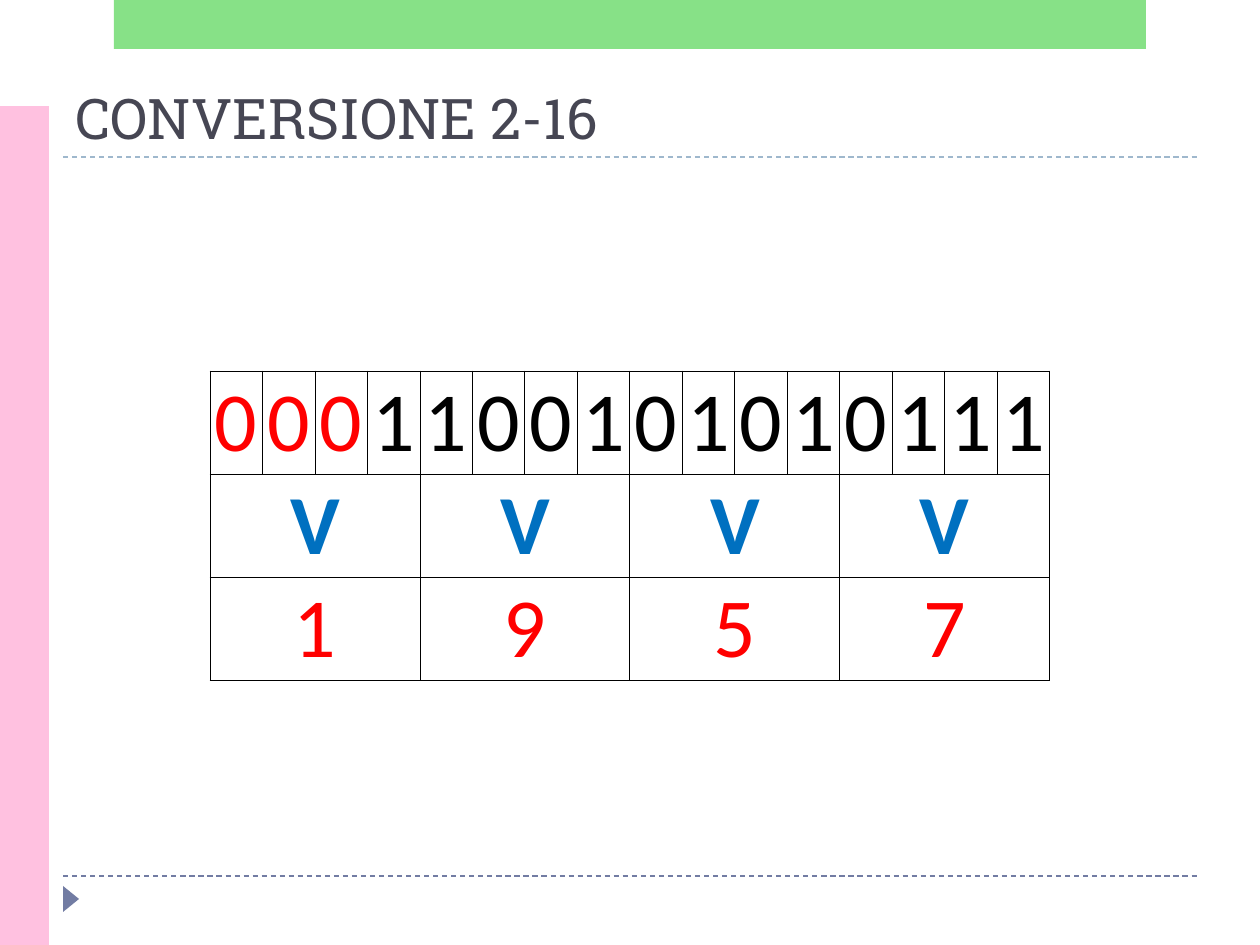
from dataclasses import dataclass

from lxml import etree
from pptx import Presentation
from pptx.dml.color import RGBColor
from pptx.enum.dml import MSO_LINE
from pptx.enum.shapes import MSO_CONNECTOR, MSO_SHAPE
from pptx.enum.text import MSO_ANCHOR, MSO_AUTO_SIZE, PP_ALIGN
from pptx.oxml.ns import qn
from pptx.util import Emu, Pt


@dataclass(frozen=True)
class Theme:
    title_font: str = "Roboto Slab"
    digit_font: str = "Calibri"
    title_size: int = 32
    digit_size: int = 48
    rule_width: float = 0.75
    grid_width: float = 0.5
    title: str = "464653"
    upper_rule: str = "9FB8CD"
    accent: str = "727CA3"
    pink: str = "FFC1E0"
    green: str = "62D862"
    green_opacity: int = 76
    white: str = "FFFFFF"
    black: str = "000000"
    red: str = "FF0000"
    blue: str = "0070C0"


THEME = Theme()
BITS = "0001100101010111"
PADDING_BITS = 3
GROUP = 4


def px(length):
    return Emu(round(length * 914400 / 126))


def rgb(colour):
    return RGBColor.from_string(colour)


def add_block(slide, preset, box, colour):
    block = slide.shapes.add_shape(preset, *map(px, box))
    block.shadow.inherit = False
    block.fill.solid()
    block.fill.fore_color.rgb = rgb(colour)
    block.line.fill.background()
    return block


def add_rule(slide, left, y, width, colour):
    rule = slide.shapes.add_connector(
        MSO_CONNECTOR.STRAIGHT, px(left), px(y), px(left + width), px(y))
    rule.line.color.rgb = rgb(colour)
    rule.line.width = Pt(THEME.rule_width)
    rule.line.dash_style = MSO_LINE.DASH
    etree.SubElement(rule._element.spPr, qn("a:effectLst"))


def add_frame(slide, box):
    """Rules, marker and coloured bands around the slide."""
    left, top, width, height = box
    bottom = top + height
    add_rule(slide, left + 63, bottom - 69, width - 126, THEME.accent)
    add_rule(slide, left + 63, top + 157, width - 126, THEME.upper_rule)
    marker = add_block(slide, MSO_SHAPE.ISOSCELES_TRIANGLE,
                       (left + 58, bottom - 54, 26, 16), THEME.accent)
    marker.rotation = 90
    add_block(slide, MSO_SHAPE.RECTANGLE,
              (left, top + 106, 49, height - 106), THEME.pink)
    band = add_block(slide, MSO_SHAPE.RECTANGLE,
                     (left + 114, top, 1032, 49), THEME.green)
    colour = band._element.spPr.find(qn("a:solidFill"))[0]
    etree.SubElement(colour, qn("a:alpha"),
                     val=str(THEME.green_opacity * 1000))


def add_title(slide, box, text):
    title = slide.shapes.title
    title.left, title.top, title.width, title.height = map(px, box)
    frame = title.text_frame
    frame.text = text
    frame.auto_size = MSO_AUTO_SIZE.NONE
    frame.vertical_anchor = MSO_ANCHOR.BOTTOM
    heading = frame.paragraphs[0]
    heading.alignment = PP_ALIGN.LEFT
    heading.font.name = THEME.title_font
    heading.font.size = Pt(THEME.title_size)
    heading.font.color.rgb = rgb(THEME.title)


def add_borders(cell):
    properties = cell._tc.get_or_add_tcPr()
    for position, side in enumerate(("lnL", "lnR", "lnT", "lnB")):
        border = etree.Element(qn(f"a:{side}"),
                               w=str(Pt(THEME.grid_width)))
        fill = etree.SubElement(border, qn("a:solidFill"))
        etree.SubElement(fill, qn("a:srgbClr"), val=THEME.black)
        properties.insert(position, border)


def write_cell(cell, text, colour, bold=False):
    cell.vertical_anchor = MSO_ANCHOR.BOTTOM
    cell.text = text
    digit = cell.text_frame.paragraphs[0]
    digit.alignment = PP_ALIGN.CENTER
    digit.font.name = THEME.digit_font
    digit.font.size = Pt(THEME.digit_size)
    digit.font.bold = bold
    digit.font.color.rgb = rgb(colour)


def add_conversion(slide, box):
    """Bits on top, one arrow and one hexadecimal digit per group of four."""
    frame = slide.shapes.add_table(3, len(BITS), *map(px, box))
    table = frame.table
    table.first_row = table.horz_banding = False
    for column in table.columns:
        column.width = px(box[2] / len(BITS))
    for row in table.rows:
        row.height = px(box[3] / 3)
    for cell in table.iter_cells():
        cell.margin_left = cell.margin_right = 0
        cell.margin_top = cell.margin_bottom = 0
        cell.fill.background()
        add_borders(cell)

    for index, bit in enumerate(BITS):
        colour = THEME.red if index < PADDING_BITS else THEME.black
        write_cell(table.cell(0, index), bit, colour)
    for start in range(0, len(BITS), GROUP):
        hex_digit = f"{int(BITS[start:start + GROUP], 2):X}"
        for row in (1, 2):
            table.cell(row, start).merge(table.cell(row, start + GROUP - 1))
        write_cell(table.cell(1, start), "V", THEME.blue, bold=True)
        write_cell(table.cell(2, start), hex_digit, THEME.red)


def main():
    deck = Presentation()
    deck.slide_width, deck.slide_height = px(1260), px(945)
    slide = deck.slides.add_slide(deck.slide_layouts[5])
    slide.background.fill.solid()
    slide.background.fill.fore_color.rgb = rgb(THEME.white)
    add_frame(slide, (0, 0, 1260, 945))
    add_title(slide, (63, 69, 1134, 88), "CONVERSIONE 2-16")
    add_conversion(slide, (210, 371, 840, 309))
    deck.save("out.pptx")


if __name__ == "__main__":
    main()
